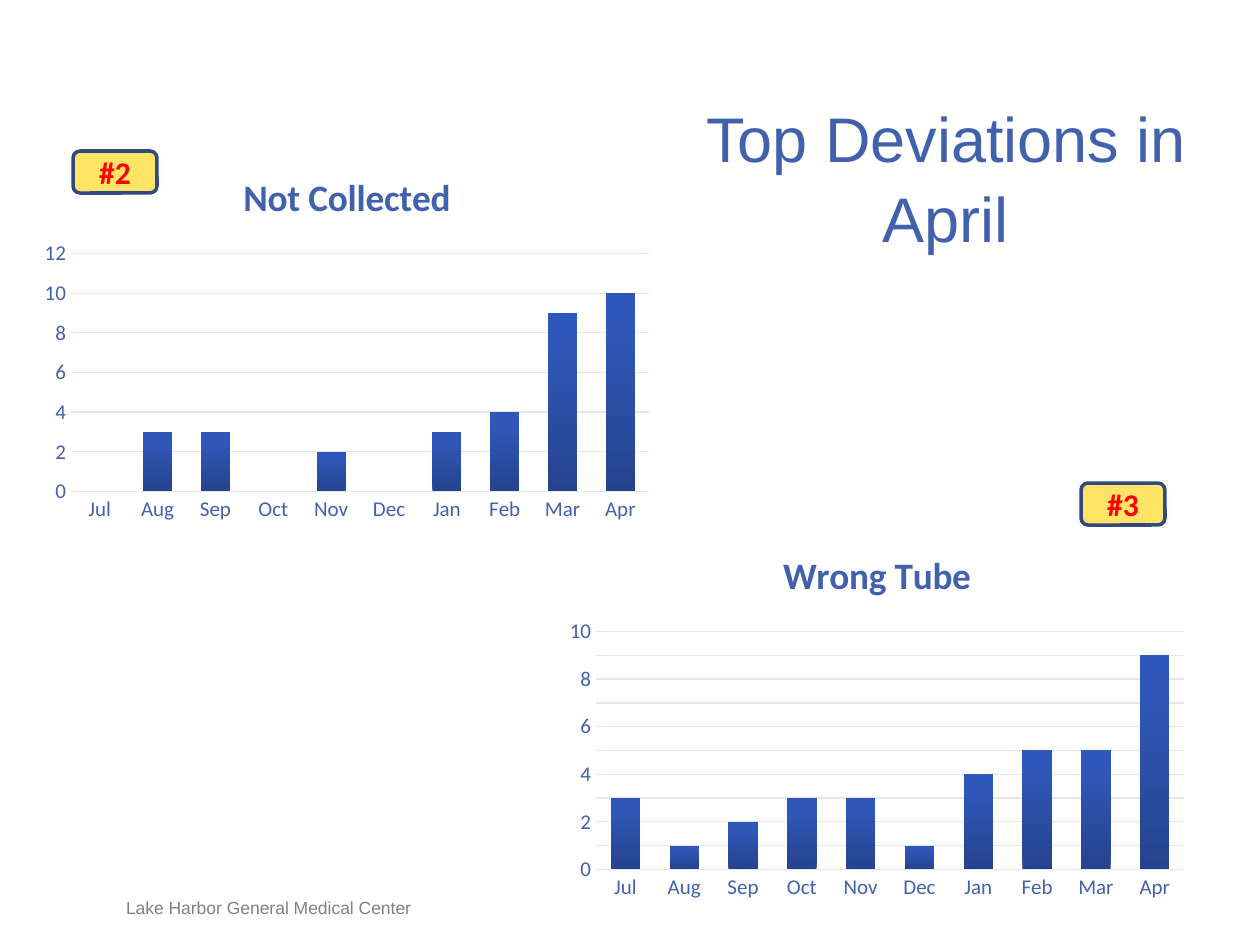
from copy import deepcopy
from dataclasses import dataclass

from pptx import Presentation
from pptx.chart.data import CategoryChartData
from pptx.dml.color import RGBColor
from pptx.enum.chart import XL_CHART_TYPE, XL_TICK_MARK
from pptx.enum.shapes import MSO_SHAPE
from pptx.enum.text import MSO_ANCHOR, PP_ALIGN
from pptx.oxml import parse_xml
from pptx.oxml.ns import nsdecls, qn
from pptx.util import Emu, Pt

PX_PER_INCH = 126
MONTHS = ["Jul", "Aug", "Sep", "Oct", "Nov", "Dec", "Jan", "Feb", "Mar", "Apr"]


@dataclass(frozen=True)
class Theme:
    heading_font: str = "Arial"
    body_font: str = "Calibri"
    blue: str = "4261AD"
    grid: str = "E2E7F4"
    gray: str = "808080"
    red: str = "FF0000"
    badge_fill: str = "FFE466"
    badge_line: str = "314880"
    bar_stops: tuple = ((0, "25438D"), (0.8, "3057B7"), (1, "2E57BB"))
    title_size: float = 36
    chart_title_size: float = 21.3
    badge_size: float = 18
    axis_size: float = 12
    footer_size: float = 10


THEME = Theme()


def px(length):
    return Emu(round(length * 914400 / PX_PER_INCH))


def rgb(value):
    return RGBColor.from_string(value)


def format_font(font, name, size, color, bold=False):
    font.name = name
    font.size = Pt(size)
    font.bold = bold
    font.color.rgb = rgb(color)


def write_text(frame, text, *, font, size, color, bold=False,
               align=PP_ALIGN.LEFT, anchor=MSO_ANCHOR.TOP, inset=0, spacing=None):
    frame.word_wrap = True
    frame.vertical_anchor = anchor
    frame.margin_left = frame.margin_right = px(inset)
    frame.margin_top = frame.margin_bottom = px(inset)
    para = frame.paragraphs[0]
    para.alignment = align
    if spacing:
        para.line_spacing = spacing
    span = para.add_run()
    span.text = text
    format_font(span.font, font, size, color, bold)


def add_title(page, text, left, top, width, height):
    title = page.shapes.title
    title.left, title.top = px(left), px(top)
    title.width, title.height = px(width), px(height)
    write_text(title.text_frame, text, font=THEME.heading_font, size=THEME.title_size,
               color=THEME.blue, align=PP_ALIGN.CENTER, spacing=1.05)


def add_footer(page, text, left, top, width, height):
    box = page.shapes.add_textbox(px(left), px(top), px(width), px(height))
    write_text(box.text_frame, text, font=THEME.heading_font, size=THEME.footer_size,
               color=THEME.gray, anchor=MSO_ANCHOR.BOTTOM)


def add_badge(page, text, left, top, width=84, height=42):
    badge = page.shapes.add_shape(MSO_SHAPE.ROUNDED_RECTANGLE,
                                  px(left), px(top), px(width), px(height))
    badge.shadow.inherit = False
    badge.fill.solid()
    badge.fill.fore_color.rgb = rgb(THEME.badge_fill)
    badge.line.color.rgb = rgb(THEME.badge_line)
    badge.line.width = Pt(2)
    write_text(badge.text_frame, text, font=THEME.body_font, size=THEME.badge_size,
               color=THEME.red, bold=True, align=PP_ALIGN.CENTER,
               anchor=MSO_ANCHOR.MIDDLE, inset=6)


def format_line(line):
    line.color.rgb = rgb(THEME.grid)
    line.width = Pt(0.75)


def format_axes(chart, maximum, unit):
    for axis in (chart.category_axis, chart.value_axis):
        axis.major_tick_mark = axis.minor_tick_mark = XL_TICK_MARK.NONE
        format_font(axis.tick_labels.font, THEME.body_font, THEME.axis_size, THEME.blue)
    chart.category_axis.has_major_gridlines = False
    format_line(chart.category_axis.format.line)
    values = chart.value_axis
    values.minimum_scale, values.maximum_scale = 0, maximum
    values.major_unit = unit
    values.has_major_gridlines = True
    format_line(values.major_gridlines.format.line)
    values.format.line.fill.background()


def fill_bars(series):
    fill = series.format.fill
    fill.gradient()
    fill.gradient_angle = 90
    # A new gradient has two stops; the bars need a third
    stop_list = series._element.find(".//" + qn("a:gsLst"))
    stop_list.append(deepcopy(stop_list[0]))
    for stop, (position, color) in zip(fill.gradient_stops, THEME.bar_stops):
        stop.position = position
        stop.color.rgb = rgb(color)


def add_column_chart(page, name, values, left, top, width, height, maximum, unit):
    data = CategoryChartData()
    data.categories = MONTHS
    data.add_series(name, values)
    chart = page.shapes.add_chart(XL_CHART_TYPE.COLUMN_CLUSTERED, px(left), px(top),
                                  px(width), px(height), data).chart
    chart.has_legend = False
    format_font(chart.font, THEME.body_font, 10, "000000")
    # Clear background, so that a badge behind the chart stays visible
    chart.element.find(qn("c:txPr")).addprevious(parse_xml(
        f'<c:spPr {nsdecls("c", "a")}><a:noFill/><a:ln><a:noFill/></a:ln></c:spPr>'))

    chart.has_title = True
    span = chart.chart_title.text_frame.paragraphs[0].add_run()
    span.text = name
    format_font(span.font, THEME.body_font, THEME.chart_title_size, THEME.blue, True)

    format_axes(chart, maximum, unit)
    plot = chart.plots[0]
    plot.gap_width, plot.overlap = 100, -24
    plot.vary_by_categories = False
    fill_bars(plot.series[0])


def main():
    deck = Presentation()
    deck.slide_width, deck.slide_height = px(1260), px(945)
    page = deck.slides.add_slide(deck.slide_layouts[5])

    # Heading and footer
    add_footer(page, "Lake Harbor General Medical Center", 126, 897, 400, 21)
    add_title(page, "Top Deviations in April", 694, 96, 504, 152)

    # Rank badges
    add_badge(page, "#2", 73, 151)
    add_badge(page, "#3", 1081, 483)

    # Monthly counts
    add_column_chart(page, "Not Collected", [None, 3, 3, None, 2, None, 3, 4, 9, 10],
                     32, 151, 630, 378, maximum=12, unit=2)
    add_column_chart(page, "Wrong Tube", [3, 1, 2, 3, 3, 1, 4, 5, 5, 9],
                     557, 529, 640, 378, maximum=10, unit=1)

    deck.save("out.pptx")


if __name__ == "__main__":
    main()
